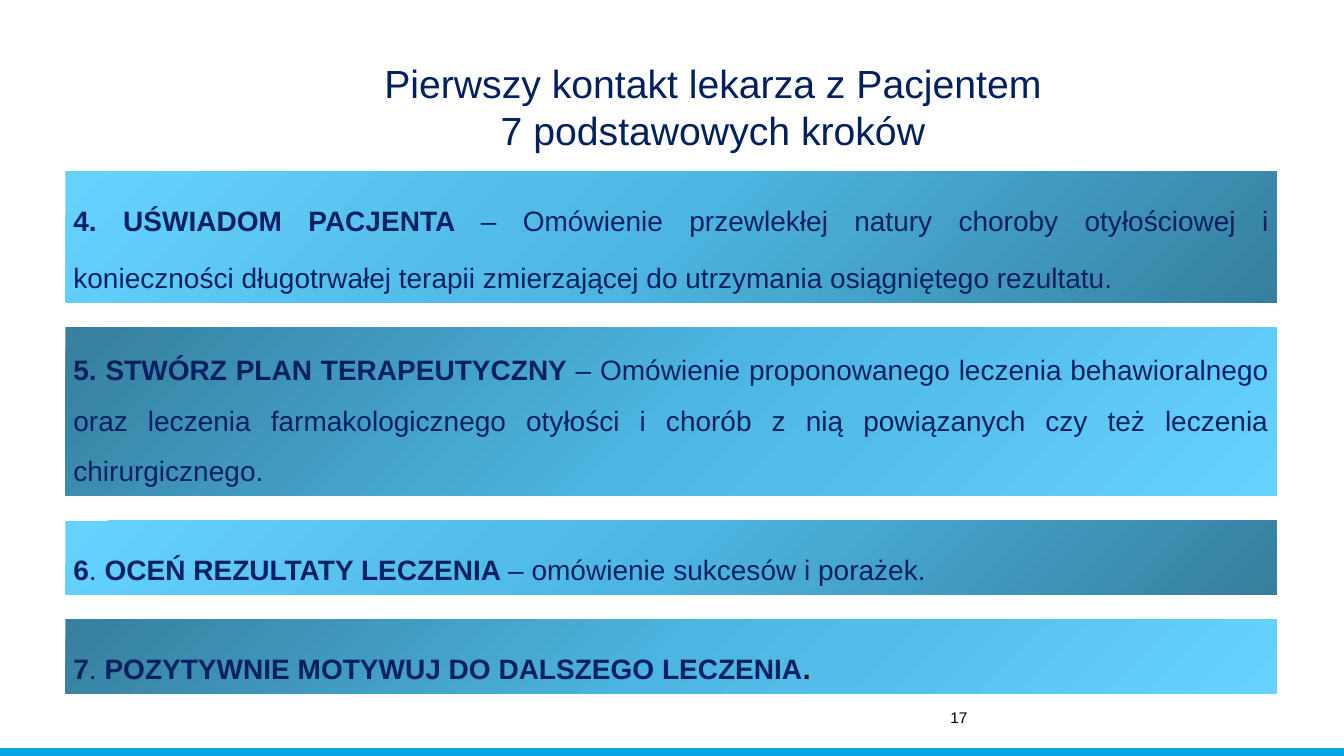
from pptx import Presentation
from pptx.dml.color import RGBColor
from pptx.enum.shapes import MSO_SHAPE
from pptx.enum.text import MSO_ANCHOR, MSO_AUTO_SIZE, PP_ALIGN
from pptx.oxml import parse_xml
from pptx.oxml.ns import nsdecls, qn
from pptx.util import Cm, Pt

COLOURS = {
    "navy": "002060",
    "black": "000000",
    "bar": "05A4E5",
    "deep": "367F9E",
    "middle": "4CB5E1",
    "light": "66D2FF",
}
DIRECTIONS = {
    "corner": '<a:path path="circle"><a:fillToRect l="100000" t="100000"/></a:path>',
    "diagonal": '<a:lin ang="2700000" scaled="1"/>',
}
STEPS = [
    (3.3, 1.7, "corner", [
        ("4. UŚWIADOM PACJENTA ", True, "navy"),
        ("– Omówienie przewlekłej natury choroby otyłościowej i konieczności "
         "długotrwałej terapii zmierzającej do utrzymania osiągniętego rezultatu.",
         False, "navy"),
    ]),
    (4.24, 1.5, "diagonal", [
        ("5. STWÓRZ PLAN TERAPEUTYCZNY ", True, "navy"),
        ("– Omówienie proponowanego leczenia behawioralnego oraz leczenia "
         "farmakologicznego otyłości i chorób z nią powiązanych czy też leczenia "
         "chirurgicznego.", False, "navy"),
    ]),
    (1.86, 1.7, "corner", [
        ("6", True, "navy"),
        (". ", False, "navy"),
        ("OCEŃ REZULTATY LECZENIA ", True, "navy"),
        ("– omówienie sukcesów i porażek.", False, "navy"),
    ]),
    (1.86, 1.7, "diagonal", [
        ("7", True, "navy"),
        (". ", False, "navy"),
        ("POZYTYWNIE MOTYWUJ DO DALSZEGO LECZENIA", True, "navy"),
        (".", True, "black"),
    ]),
]
STEP_LEFT, STEP_TOP, STEP_WIDTH, STEP_GAP = 1.65, 4.32, 30.53, 0.63


def write(frame, spans, size=20, align=PP_ALIGN.LEFT, spacing=1.0,
          anchor=MSO_ANCHOR.TOP, fit=MSO_AUTO_SIZE.SHAPE_TO_FIT_TEXT):
    frame.word_wrap = True
    frame.auto_size = fit
    frame.vertical_anchor = anchor
    frame.margin_left = frame.margin_right = Cm(0.2)
    frame.margin_top = frame.margin_bottom = Cm(0.2)
    para = frame.paragraphs[0]
    para.alignment = align
    para.line_spacing = spacing
    para.space_before = Pt(0)
    for index, (line, bold, colour) in enumerate(spans):
        for number, part in enumerate(line.split("\n")):
            if number:
                para.add_line_break()
            span = para.add_run()
            span.text = part
            span.font.name = "Arial"
            span.font.size = Pt(size)
            span.font.bold = bold
            span.font.color.rgb = RGBColor.from_string(COLOURS[colour])


class SlideBuilder:
    def __init__(self, deck):
        self.page = deck.slides.add_slide(deck.slide_layouts[5])

    def title(self, text, left, top, width, height):
        box = self.page.shapes.title
        box.left, box.top, box.width, box.height = map(Cm, (left, top, width, height))
        write(box.text_frame, [(text, False, "navy")], size=28, align=PP_ALIGN.CENTER,
              anchor=MSO_ANCHOR.MIDDLE, fit=MSO_AUTO_SIZE.NONE)

    def label(self, text, left, top, width, height, size):
        box = self.page.shapes.add_textbox(*map(Cm, (left, top, width, height)))
        write(box.text_frame, [(text, False, "black")], size=size)

    def rectangle(self, left, top, width, height, colour):
        box = self.page.shapes.add_shape(
            MSO_SHAPE.RECTANGLE, *map(Cm, (left, top, width, height)))
        box.shadow.inherit = False
        box.line.fill.background()
        box.fill.solid()
        box.fill.fore_color.rgb = RGBColor.from_string(COLOURS[colour])
        return box

    def step(self, top, height, spacing, direction, spans):
        box = self.rectangle(STEP_LEFT, top, STEP_WIDTH, height, "middle")
        stops = "".join(
            f'<a:gs pos="{index * 50000}"><a:srgbClr val="{COLOURS[name]}"/></a:gs>'
            for index, name in enumerate(("deep", "middle", "light")))
        gradient = parse_xml(
            f'<a:gradFill {nsdecls("a")} rotWithShape="1"><a:gsLst>{stops}</a:gsLst>'
            f"{DIRECTIONS[direction]}</a:gradFill>")
        properties = box.element.spPr
        properties.replace(properties.find(qn("a:solidFill")), gradient)
        write(box.text_frame, spans, align=PP_ALIGN.JUSTIFY, spacing=spacing,
              anchor=MSO_ANCHOR.MIDDLE)


def main():
    deck = Presentation()
    deck.slide_width, deck.slide_height = Cm(33.87), Cm(19.05)
    builder = SlideBuilder(deck)
    builder.rectangle(0, 18.85, 33.87, 0.2, "bar")
    builder.label("17", 23.75, 17.65, 7.77, 0.86, 11)
    builder.title("Pierwszy kontakt lekarza z Pacjentem\n7 podstawowych kroków",
                  4.39, 1.02, 27.15, 3.3)
    top = STEP_TOP
    for height, spacing, direction, spans in STEPS:
        builder.step(top, height, spacing, direction, spans)
        top += height + STEP_GAP
    deck.save("out.pptx")


if __name__ == "__main__":
    main()
